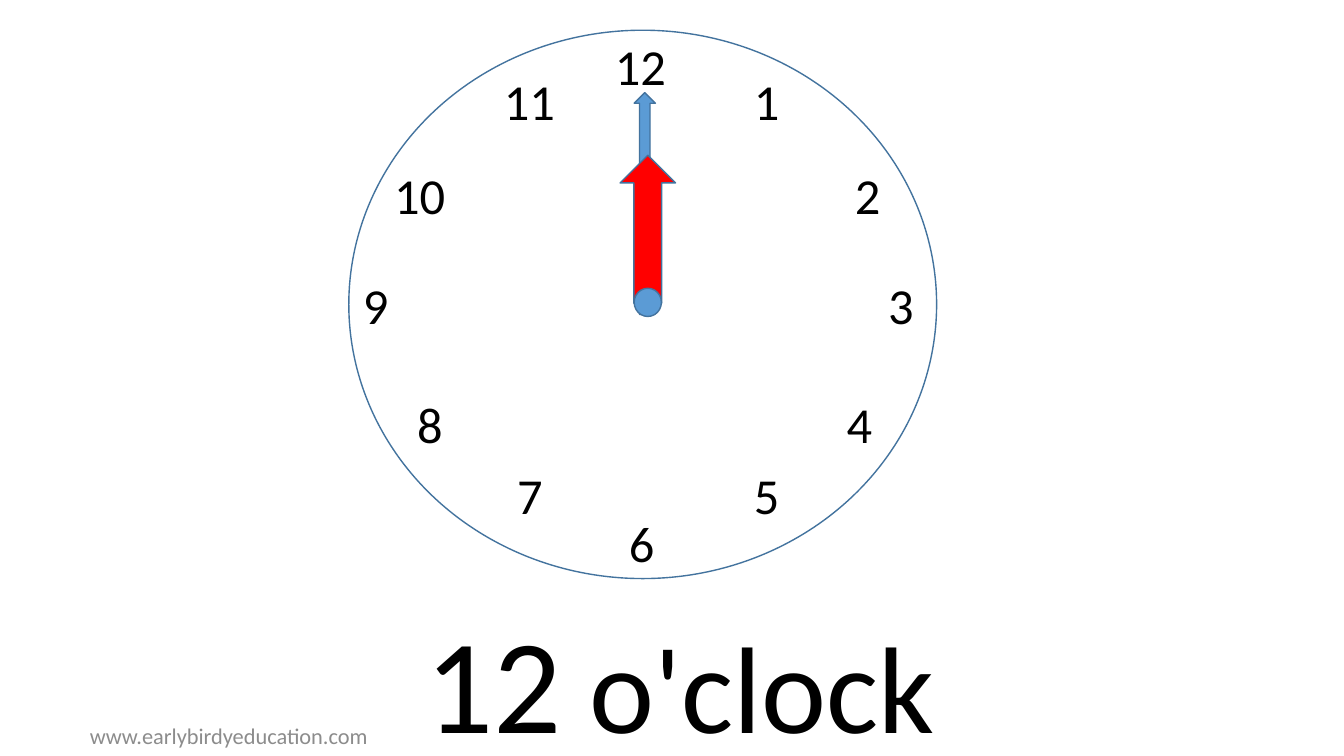
from dataclasses import dataclass

from pptx import Presentation
from pptx.dml.color import RGBColor
from pptx.enum.shapes import MSO_SHAPE as Shape
from pptx.enum.text import MSO_ANCHOR as Anchor, MSO_AUTO_SIZE as AutoSize, PP_ALIGN as Align
from pptx.util import Emu, Pt

EMU_PER_PX = 9144  # 100 px to the inch


@dataclass(frozen=True)
class Theme:
    font: str = "Calibri"
    face: str = "FFFFFF"
    outline: str = "43739E"
    minute: str = "5B9BD5"
    hour: str = "FF0000"
    text: str = "000000"
    footer: str = "8C8C8C"
    numeral_size: int = 36
    hour_size: int = 96
    caption_size: int = 88
    footer_size: int = 16
    line_width: int = 1


class ClockSlide:
    def __init__(self, slide, theme):
        self.slide = slide
        self.theme = theme

    def shape(self, kind, box, fill):
        shape = self.slide.shapes.add_shape(kind, *map(px, box))
        shape.shadow.inherit = False
        shape.fill.solid()
        shape.fill.fore_color.rgb = RGBColor.from_string(fill)
        shape.line.color.rgb = RGBColor.from_string(self.theme.outline)
        shape.line.width = Pt(self.theme.line_width)

    def text(self, box, runs, color, align=Align.LEFT, wrap=True, grow=True, anchor=Anchor.TOP):
        """Add one paragraph made of (text, size) runs."""
        text_frame = self.slide.shapes.add_textbox(*map(px, box)).text_frame
        text_frame.word_wrap = wrap
        text_frame.auto_size = AutoSize.SHAPE_TO_FIT_TEXT if grow else AutoSize.NONE
        text_frame.vertical_anchor = anchor
        paragraph = text_frame.paragraphs[0]
        paragraph.alignment = align
        for words, size in runs:
            run = paragraph.add_run()
            run.text = words
            run.font.name = self.theme.font
            run.font.size = Pt(size)
            run.font.color.rgb = RGBColor.from_string(color)

    def numeral(self, number, left, top):
        width = 46 if number < 10 else 71
        self.text((left, top, width, 71), [(str(number), self.theme.numeral_size)],
                  self.theme.text, wrap=False)


def px(length):
    return Emu(length * EMU_PER_PX)


# Left and top of each numeral's box
NUMERALS = {
    6: (614, 503), 3: (871, 267), 9: (350, 267),
    1: (738, 65), 2: (838, 158), 4: (830, 385), 5: (738, 456),
    11: (490, 65), 10: (381, 158), 7: (503, 456), 8: (404, 385),
}


def main():
    presentation = Presentation()
    presentation.slide_width, presentation.slide_height = px(1333), px(750)
    theme = Theme()
    clock = ClockSlide(presentation.slides.add_slide(presentation.slide_layouts[6]), theme)

    clock.shape(Shape.OVAL, (346, 30, 583, 544), theme.face)
    clock.text((600, 30, 74, 71), [("12", theme.numeral_size)], theme.text)
    for number, (left, top) in NUMERALS.items():
        clock.numeral(number, left, top)

    clock.shape(Shape.UP_ARROW, (629, 92, 21, 220), theme.minute)
    clock.shape(Shape.UP_ARROW, (615, 154, 55, 147), theme.hour)
    clock.shape(Shape.OVAL, (629, 286, 27, 28), theme.minute)

    clock.text((392, 589, 565, 172),
               [("12", theme.hour_size), (" o'clock", theme.caption_size)],
               theme.text, align=Align.CENTER)
    clock.text((2, 710, 450, 40), [("www.earlybirdyeducation.com", theme.footer_size)],
               theme.footer, align=Align.CENTER, grow=False, anchor=Anchor.MIDDLE)
    presentation.save("out.pptx")


if __name__ == "__main__":
    main()
